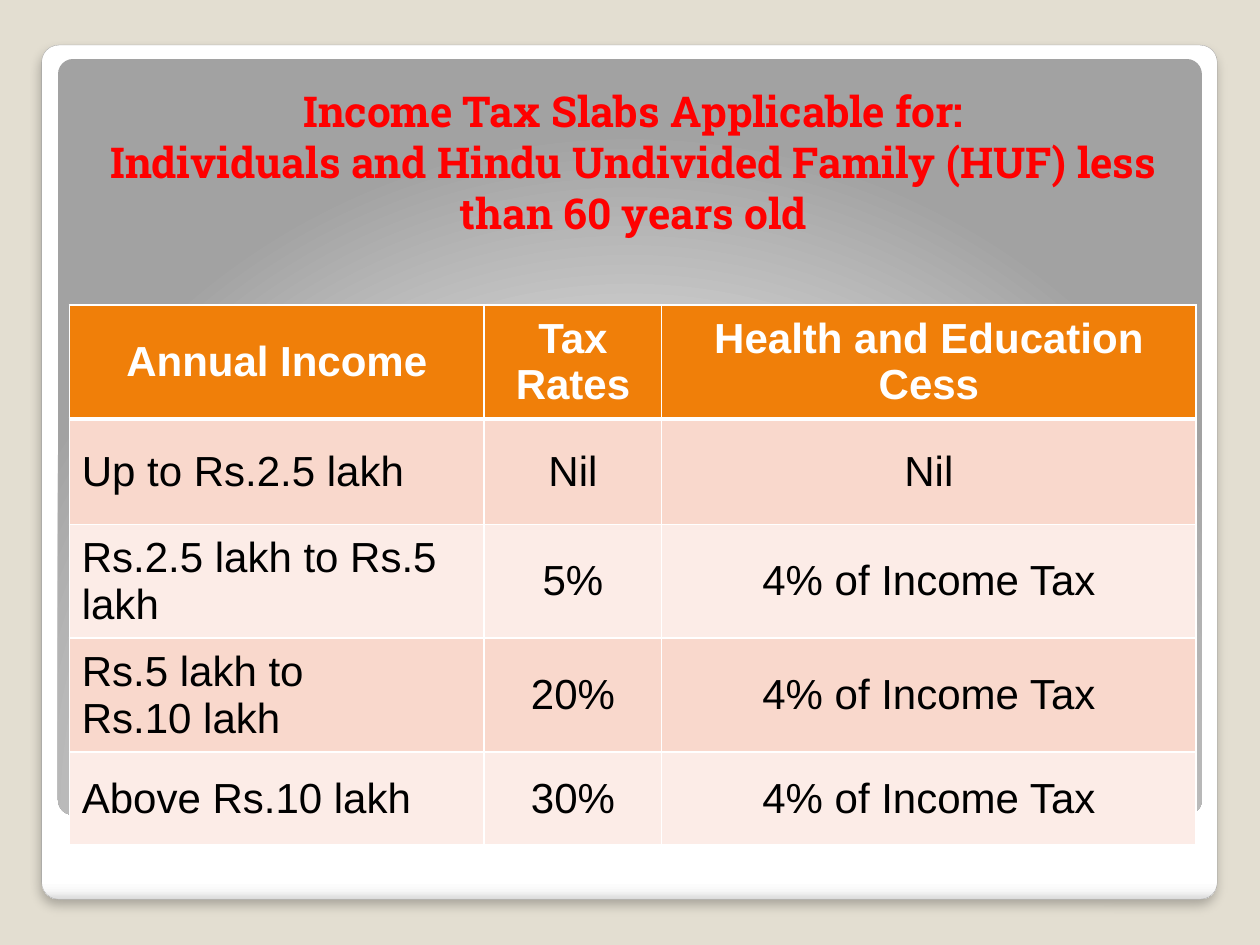
"""Build the slide of income tax slabs for individuals and HUF under 60."""
from dataclasses import dataclass
from typing import Any, NamedTuple

from pptx import Presentation
from pptx.dml.color import RGBColor as Rgb
from pptx.enum.shapes import MSO_SHAPE as Preset
from pptx.enum.text import MSO_ANCHOR as Anchor, PP_ALIGN as Align
from pptx.oxml import parse_xml as to_xml
from pptx.oxml.ns import nsdecls
from pptx.util import Cm, Length, Pt


@dataclass(frozen=True)
class Theme:
    backdrop: str = "E3DED1"
    card_edge: str = "A4A4A4"
    title: str = "FF0000"
    header: str = "F07F09"
    header_text: str = "FFFFFF"
    body_text: str = "000000"
    grid: str = "FFFFFF"
    bands: tuple[str, str] = ("F9D8CC", "FCECE7")
    title_font: str = "Roboto Slab"
    table_font: str = "Arial"
    title_size: float = 24.3
    table_size: float = 24


class Box(NamedTuple):
    left: Length
    top: Length
    width: Length
    height: Length


@dataclass(frozen=True)
class Panel:
    box: Box
    stops: tuple[tuple[int, str], ...]
    direction: str
    edge: str | None = None
    shadow: str | None = None


THEME = Theme()
PANELS = (
    Panel(
        Box(Cm(0.84), Cm(0.91), Cm(23.7), Cm(17.22)),
        ((0, "FFFFFF"), (98, "FFFFFF"), (99, "F7F7F7"), (100, "DADADA")),
        '<a:lin ang="5400000" scaled="0"/>',
        edge=THEME.card_edge,
        shadow='<a:outerShdw {} blurRad="76200" dist="50800" dir="5400000" '
               'algn="tl" rotWithShape="0"><a:srgbClr val="000000">'
               '<a:alpha val="25000"/></a:srgbClr></a:outerShdw>',
    ),
    Panel(
        Box(Cm(1.17), Cm(1.19), Cm(23.06), Cm(15.24)),
        ((0, "FFFFFF"), (55, "E1E1E1"), (100, "A2A2A2")),
        '<a:path path="circle"><a:fillToRect l="50000" t="175000" '
        'r="50000" b="-75000"/></a:path>',
    ),
)
TITLE_BOX = Box(Cm(1.4), Cm(1.47), Cm(22.73), Cm(4.45))
TITLE_LINES = (
    "Income Tax Slabs Applicable for:",
    "Individuals and Hindu Undivided Family (HUF) less than 60 years old",
)
TABLE_BOX = Box(Cm(1.4), Cm(6.15), Cm(22.73), Cm(10.42))
COLUMN_WIDTHS = (Cm(8.36), Cm(3.58), Cm(10.77))
ROW_HEIGHTS = (Cm(2.13),) * 4 + (Cm(1.88),)
CESS = "4% of Income Tax"
SLABS = (
    ("Annual Income", "Tax Rates", "Health and Education Cess"),
    ("Up to Rs.2.5 lakh", "Nil", "Nil"),
    ("Rs.2.5 lakh to Rs.5 lakh", "5%", CESS),
    ("Rs.5 lakh to\nRs.10 lakh", "20%", CESS),
    ("Above Rs.10 lakh", "30%", CESS),
)


def apply_format(target: Any, formats: dict[str, Any]) -> None:
    """Set every named format value on the target."""
    for name, value in formats.items():
        setattr(target, name, value)


def style_font(font: Any, face: str, size: float, color: str, bold: bool) -> None:
    """Give a run its typeface, size, colour and weight."""
    apply_format(font, {"name": face, "size": Pt(size), "bold": bold})
    font.color.rgb = Rgb.from_string(color)


def draw_panel(slide: Any, panel: Panel) -> None:
    """Draw a rounded panel with a gradient fill."""
    shape = slide.shapes.add_shape(Preset.ROUNDED_RECTANGLE, *panel.box)
    shape.adjustments[0] = 0.02
    shape.shadow.inherit = False
    stops = "".join(
        f'<a:gs pos="{position * 1000}"><a:srgbClr val="{color}"/></a:gs>'
        for position, color in panel.stops
    )
    properties = shape.element.spPr
    properties.insert(2, to_xml(
        f'<a:gradFill {nsdecls("a")} rotWithShape="1"><a:gsLst>{stops}</a:gsLst>'
        f'{panel.direction}</a:gradFill>'
    ))
    if panel.edge:
        shape.line.color.rgb = Rgb.from_string(panel.edge)
        shape.line.width = Pt(0.16)
    else:
        shape.line.fill.background()
    if panel.shadow:
        properties[-1].append(to_xml(panel.shadow.format(nsdecls("a"))))


def draw_title(slide: Any) -> None:
    """Write the centred heading above the table."""
    frame = slide.shapes.add_textbox(*TITLE_BOX).text_frame
    apply_format(frame, {
        "word_wrap": True,
        "vertical_anchor": Anchor.BOTTOM,
        "margin_bottom": Cm(1.12),
    })
    heading = frame.paragraphs[0]
    heading.alignment = Align.CENTER
    for position, line in enumerate(TITLE_LINES):
        if position:
            heading.add_line_break()
        run = heading.add_run()
        run.text = line
        style_font(run.font, THEME.title_font, THEME.title_size, THEME.title, True)


def draw_borders(cell: Any, is_header: bool) -> None:
    """Rule the four sides of a cell, heavier below the header."""
    properties = cell._tc.get_or_add_tcPr()
    weights = {"lnL": 1, "lnR": 1, "lnT": 1, "lnB": 3 if is_header else 1}
    for position, (side, weight) in enumerate(weights.items()):
        properties.insert(position, to_xml(
            f'<a:{side} {nsdecls("a")} w="{Pt(weight)}"><a:solidFill>'
            f'<a:srgbClr val="{THEME.grid}"/></a:solidFill></a:{side}>'
        ))


def fill_cell(cell: Any, text: str, row: int, column: int) -> None:
    """Write and format one table cell."""
    is_header = row == 0
    side_margin = Cm(0.13) if is_header else Cm(0.25)
    apply_format(cell, {
        "text": text,
        "vertical_anchor": Anchor.MIDDLE,
        "margin_left": side_margin,
        "margin_right": side_margin,
        "margin_top": Cm(0.13),
        "margin_bottom": Cm(0.13),
    })
    cell.fill.solid()
    cell.fill.fore_color.rgb = Rgb.from_string(
        THEME.header if is_header else THEME.bands[(row - 1) % 2]
    )
    color = THEME.header_text if is_header else THEME.body_text
    for paragraph in cell.text_frame.paragraphs:
        paragraph.alignment = Align.CENTER if is_header or column else Align.LEFT
        for run in paragraph.runs:
            style_font(run.font, THEME.table_font, THEME.table_size, color, is_header)
    draw_borders(cell, is_header)


def draw_slabs(slide: Any) -> None:
    """Draw the table of income slabs, rates and cess."""
    table = slide.shapes.add_table(len(SLABS), len(SLABS[0]), *TABLE_BOX).table
    for column, width in zip(table.columns, COLUMN_WIDTHS):
        column.width = width
    for row, height in zip(table.rows, ROW_HEIGHTS):
        row.height = height
    for row, slab in enumerate(SLABS):
        for column, text in enumerate(slab):
            fill_cell(table.cell(row, column), text, row, column)


def main() -> None:
    """Build and save the slide."""
    deck = Presentation()
    apply_format(deck, {"slide_width": Cm(25.4), "slide_height": Cm(19.05)})
    slide = deck.slides.add_slide(deck.slide_layouts[6])
    slide.background.fill.solid()
    slide.background.fill.fore_color.rgb = Rgb.from_string(THEME.backdrop)
    for panel in PANELS:
        draw_panel(slide, panel)
    draw_title(slide)
    draw_slabs(slide)
    deck.save("out.pptx")


if __name__ == "__main__":
    main()
